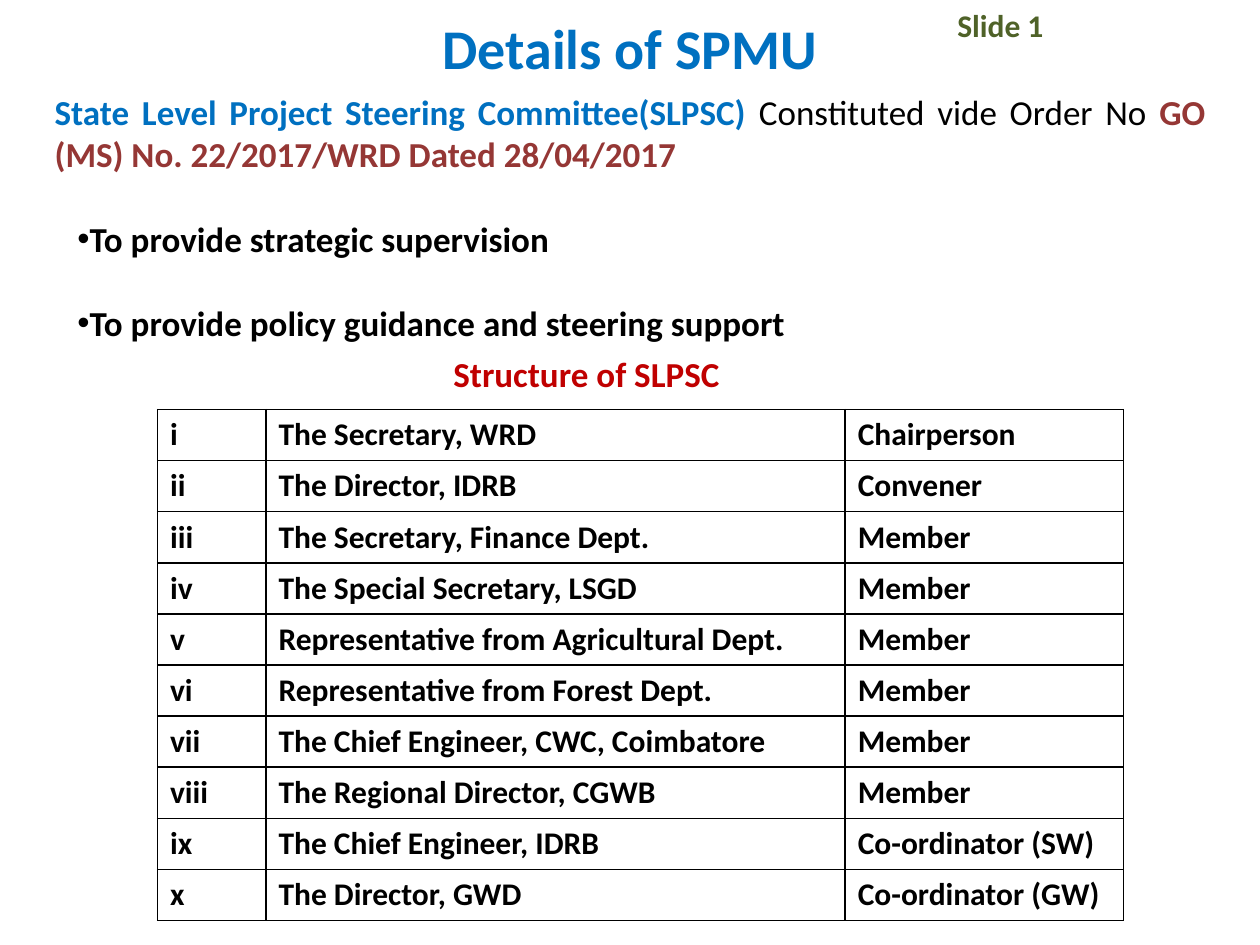
import pptx
import pptx.util
import pptx.dml.color
import pptx.enum.text
import pptx.oxml
import pptx.oxml.ns
from lxml import etree

Pt = pptx.util.Pt
ALIGN = pptx.enum.text.PP_ALIGN
ANCHOR = pptx.enum.text.MSO_ANCHOR
AUTO_SIZE = pptx.enum.text.MSO_AUTO_SIZE
BLUE, BROWN, RED, GREEN, BLACK = "0070C0", "953735", "C00000", "4F6228", "000000"

COMMITTEE = [
    ("State Level Project Steering Committee(SLPSC) ", BLUE, True),
    ("Constituted vide Order No ", BLACK, False),
    ("GO (MS) No. 22/2017/WRD Dated 28/04/2017", BROWN, True),
]
PURPOSES = ["To provide strategic supervision", "To provide policy guidance and steering support"]
MEMBERS = [
    ("i", "The Secretary, WRD", "Chairperson"),
    ("ii", "The Director, IDRB", "Convener"),
    ("iii", "The Secretary, Finance Dept.", "Member"),
    ("iv", "The Special Secretary, LSGD", "Member"),
    ("v", "Representative from Agricultural Dept.", "Member"),
    ("vi", "Representative from Forest Dept.", "Member"),
    ("vii", "The Chief Engineer, CWC, Coimbatore", "Member"),
    ("viii", "The Regional Director, CGWB", "Member"),
    ("ix", "The Chief Engineer, IDRB", "Co-ordinator (SW)"),
    ("x", "The Director, GWD", "Co-ordinator (GW)"),
]


def set_values(target, values):
    for name, value in values.items():
        setattr(target, name, value)


def set_color(target, color):
    target.rgb = pptx.dml.color.RGBColor.from_string(color)


class SlideBuilder:
    font_name = "Calibri"

    def __init__(self, slide):
        self.slide = slide

    def run(self, paragraph, text, size, color, bold=True):
        run = paragraph.add_run()
        run.text = text
        set_values(run.font, {"name": self.font_name, "size": Pt(size), "bold": bold})
        set_color(run.font.color, color)

    def place(self, shape, left, top, width, height):
        set_values(shape, {"left": Pt(left), "top": Pt(top), "width": Pt(width), "height": Pt(height)})

    def title(self, text, box):
        shape = self.slide.shapes.title
        self.place(shape, *box)
        set_values(shape.text_frame, {"auto_size": AUTO_SIZE.NONE, "vertical_anchor": ANCHOR.MIDDLE})
        paragraph = shape.text_frame.paragraphs[0]
        paragraph.alignment = ALIGN.CENTER
        self.run(paragraph, text, 32, BLUE)

    def body(self, lead, bullets, box):
        shape = self.slide.placeholders[1]
        self.place(shape, *box)
        frame = shape.text_frame
        set_values(frame, {"auto_size": AUTO_SIZE.NONE, "vertical_anchor": ANCHOR.TOP})
        self.body_paragraph(frame.paragraphs[0], lead, 0, 0, "buNone")
        for text in bullets:
            self.body_paragraph(frame.add_paragraph(), [(text, BLACK, True)], 24.4, 13, "buChar", char="•")

    def body_paragraph(self, paragraph, parts, space, indent, bullet, **attributes):
        set_values(paragraph, {"alignment": ALIGN.JUSTIFY, "space_before": Pt(space)})
        properties = paragraph._p.get_or_add_pPr()
        properties.set("marL", "0")
        properties.set("indent", str(Pt(indent)))
        etree.SubElement(properties, pptx.oxml.ns.qn(f"a:{bullet}"), **attributes)
        for text, color, bold in parts:
            self.run(paragraph, text, 20, color, bold)

    def label(self, text, size, color, box):
        shape = self.slide.shapes.add_textbox(*map(Pt, box))
        set_values(shape.text_frame, {"word_wrap": True, "auto_size": AUTO_SIZE.SHAPE_TO_FIT_TEXT})
        self.run(shape.text_frame.paragraphs[0], text, size, color)

    def table(self, rows, widths, left, top, row_height):
        box = (left, top, sum(widths), row_height * len(rows))
        table = self.slide.shapes.add_table(len(rows), len(widths), *map(Pt, box)).table
        set_values(table, {"first_row": False, "horz_banding": False})
        for column, width in zip(table.columns, widths):
            column.width = Pt(width)
        for row, texts in zip(table.rows, rows):
            row.height = Pt(row_height)
            for cell, text in zip(row.cells, texts):
                self.borders(cell)
                cell.fill.background()
                self.run(cell.text_frame.paragraphs[0], text, 18, BLACK)

    def borders(self, cell):
        properties = cell._tc.get_or_add_tcPr()
        for side in ("L", "R", "T", "B"):
            properties.append(pptx.oxml.parse_xml(
                f'<a:ln{side} {pptx.oxml.ns.nsdecls("a")} w="{Pt(1)}"><a:solidFill>'
                f'<a:srgbClr val="{BLACK}"/></a:solidFill></a:ln{side}>'
            ))


def main():
    presentation = pptx.Presentation()
    set_values(presentation, {"slide_width": Pt(720), "slide_height": Pt(540)})
    builder = SlideBuilder(presentation.slides.add_slide(presentation.slide_layouts[1]))
    builder.title("Details of SPMU", (0, 0, 720, 54))
    builder.body(COMMITTEE, PURPOSES, (24, 48, 672, 153))
    builder.label("Structure of SLPSC", 20, RED, (252, 198, 174, 31.5))
    builder.table(MEMBERS, (62, 331, 159), 90, 234, 29.2)
    builder.label("Slide 1", 18, GREEN, (540, 0, 150, 29))
    presentation.save("out.pptx")


if __name__ == "__main__":
    main()
